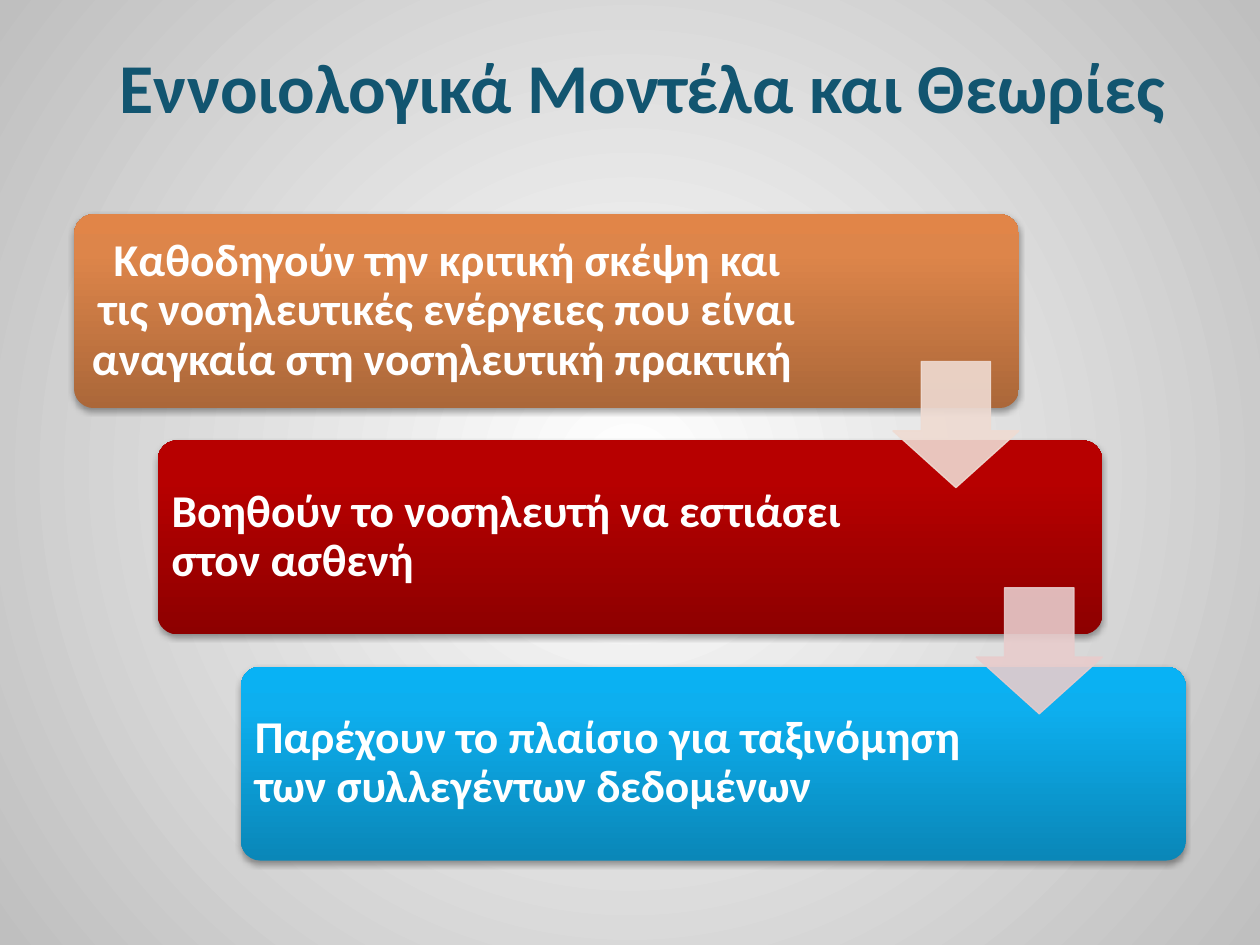
from dataclasses import dataclass

from lxml import etree
from pptx import Presentation
from pptx.dml.color import RGBColor
from pptx.enum.shapes import MSO_SHAPE
from pptx.enum.text import MSO_ANCHOR, PP_ALIGN
from pptx.oxml import parse_xml
from pptx.oxml.ns import qn
from pptx.util import Inches, Pt

ROUNDED, DOWN_ARROW = MSO_SHAPE.ROUNDED_RECTANGLE, MSO_SHAPE.DOWN_ARROW
LEFT, CENTER, MIDDLE = PP_ALIGN.LEFT, PP_ALIGN.CENTER, MSO_ANCHOR.MIDDLE
NS = 'xmlns:a="http://schemas.openxmlformats.org/drawingml/2006/main"'


@dataclass(frozen=True)
class Theme:
    """Colours and type sizes of the slide."""
    font: str = "Calibri"
    title_size: float = 40
    step_size: float = 26
    title: str = "125570"
    step_text: str = "FFFFFF"
    backdrop: tuple = ((0, "FFFFFF"), (100, "BFBFBF"))
    orange: tuple = ((0, "AB6739"), (80, "DD854A"), (100, "E18548"))
    red: tuple = ((0, "8D0000"), (80, "B70000"), (100, "B80000"))
    blue: tuple = ((0, "0A87B8"), (80, "0DAFEF"), (100, "08B2F5"))
    orange_arrow: str = "EFDBD2"
    red_arrow: str = "E8CCCC"


THEME = Theme()
STEPS = (
    ("Καθοδηγούν την κριτική σκέψη και τις νοσηλευτικές ενέργειες που είναι "
     "αναγκαία στη νοσηλευτική πρακτική ", CENTER, 0.79, THEME.orange, THEME.orange_arrow),
    ("Βοηθούν το νοσηλευτή να εστιάσει στον ασθενή", LEFT, 0.78, THEME.red, THEME.red_arrow),
    ("Παρέχουν το πλαίσιο για ταξινόμηση των συλλεγέντων δεδομένων",
     LEFT, 0.78, THEME.blue, None),
)


def gradient(stops, direction):
    """Return a gradient fill element with the given stops and direction."""
    marks = "".join(f'<a:gs pos="{share * 1000}"><a:srgbClr val="{colour}"/></a:gs>'
                    for share, colour in stops)
    return parse_xml(f'<a:gradFill {NS} rotWithShape="1"><a:gsLst>{marks}</a:gsLst>'
                     f'{direction}</a:gradFill>')


def swap_solid(parent, fill):
    """Replace the solid fill of an element by another fill."""
    parent.replace(parent.find(qn("a:solidFill")), fill)


def style_text(paragraph, size, colour, align):
    """Set the font and alignment of a paragraph."""
    paragraph.alignment = align
    font = paragraph.font
    font.name, font.size, font.bold = THEME.font, Pt(size), True
    font.color.rgb = RGBColor.from_string(colour)


def add_backdrop(slide):
    """Fill the slide with a circular gradient."""
    fill = slide.background.fill
    fill.solid()
    fill.fore_color.rgb = RGBColor.from_string(THEME.backdrop[0][1])
    swap_solid(slide.element.cSld.find(qn("p:bg")).find(qn("p:bgPr")), gradient(
        THEME.backdrop,
        '<a:path path="circle"><a:fillToRect l="50000" t="50000" r="50000" b="50000"/></a:path>'))


def add_title(slide, box, wording):
    """Place the outlined title in its box."""
    title = slide.shapes.title
    title.left, title.top, title.width, title.height = box
    title.text_frame.text = wording
    title.text_frame.vertical_anchor = MIDDLE
    paragraph = title.text_frame.paragraphs[0]
    style_text(paragraph, THEME.title_size, THEME.title, CENTER)
    paragraph.runs[0].font._element.insert(0, parse_xml(
        f'<a:ln {NS} w="9525"><a:solidFill><a:srgbClr val="{THEME.title}"/></a:solidFill></a:ln>'))


def add_card(slide, box, stops):
    """Draw a rounded card with a gradient and a soft shadow."""
    card = slide.shapes.add_shape(ROUNDED, *box)
    card.adjustments[0] = 0.1
    card.line.fill.background()
    card.fill.solid()
    properties = card.element.spPr
    swap_solid(properties, gradient(stops, '<a:lin ang="16200000" scaled="0"/>'))
    properties.append(parse_xml(
        f'<a:effectLst {NS}><a:outerShdw blurRad="{Pt(3.1)}" dist="{Pt(1.8)}" dir="5400000" '
        'rotWithShape="0"><a:srgbClr val="000000"><a:alpha val="35000"/></a:srgbClr>'
        '</a:outerShdw></a:effectLst>'))


def add_wording(slide, box, wording, align):
    """Write the text of a step in its box."""
    frame = slide.shapes.add_textbox(*box).text_frame
    frame.word_wrap, frame.vertical_anchor = True, MIDDLE
    frame.margin_left = frame.margin_right = Inches(0.11)
    frame.margin_top = frame.margin_bottom = Inches(0.11)
    frame.text = wording
    paragraph = frame.paragraphs[0]
    paragraph.line_spacing, paragraph.space_after = 0.9, Pt(0.35 * THEME.step_size)
    style_text(paragraph, THEME.step_size, THEME.step_text, align)


def add_step_arrow(slide, box, colour):
    """Draw a slightly transparent arrow to the next step."""
    arrow = slide.shapes.add_shape(DOWN_ARROW, *box)
    arrow.adjustments[0], arrow.adjustments[1] = 0.55, 0.45
    arrow.shadow.inherit = False
    arrow.line.width = Pt(0.75)
    for fill in (arrow.fill, arrow.line.fill):
        fill.solid()
        fill.fore_color.rgb = RGBColor.from_string(colour)
    for tint in arrow.element.spPr.iter(qn("a:srgbClr")):
        etree.SubElement(tint, qn("a:alpha")).set("val", "90000")


def add_staircase(slide, box, steps):
    """Lay the steps out as a descending staircase joined by arrows."""
    left, top, width, height = box
    card_width, card_height = int(0.85 * width), int(0.3 * height)
    shift_x = (width - card_width) // (len(steps) - 1)
    shift_y = (height - card_height) // (len(steps) - 1)
    arrow_side = int(0.65 * card_height)
    arrows = []
    for index, (wording, align, text_share, stops, arrow_colour) in enumerate(steps):
        x, y = left + index * shift_x, top + index * shift_y
        add_card(slide, (x, y, card_width, card_height), stops)
        add_wording(slide, (x, y, int(text_share * card_width), card_height), wording, align)
        if arrow_colour:
            arrow_box = (x + card_width - arrow_side, y + int(0.76 * card_height),
                         arrow_side, arrow_side)
            arrows.append((arrow_box, arrow_colour))
    for arrow_box, arrow_colour in arrows:
        add_step_arrow(slide, arrow_box, arrow_colour)


def main():
    """Build and save the slide."""
    deck = Presentation()
    deck.slide_width, deck.slide_height = Inches(10), Inches(7.5)
    slide = deck.slides.add_slide(deck.slide_layouts[5])
    add_backdrop(slide)
    add_title(slide, [Inches(n) for n in (0.43, 0.05, 9.34, 1.25)],
              "Εννοιολογικά Μοντέλα και Θεωρίες")
    add_staircase(slide, [Inches(n) for n in (0.59, 1.7, 8.82, 5.13)], STEPS)
    deck.save("out.pptx")


if __name__ == "__main__":
    main()
